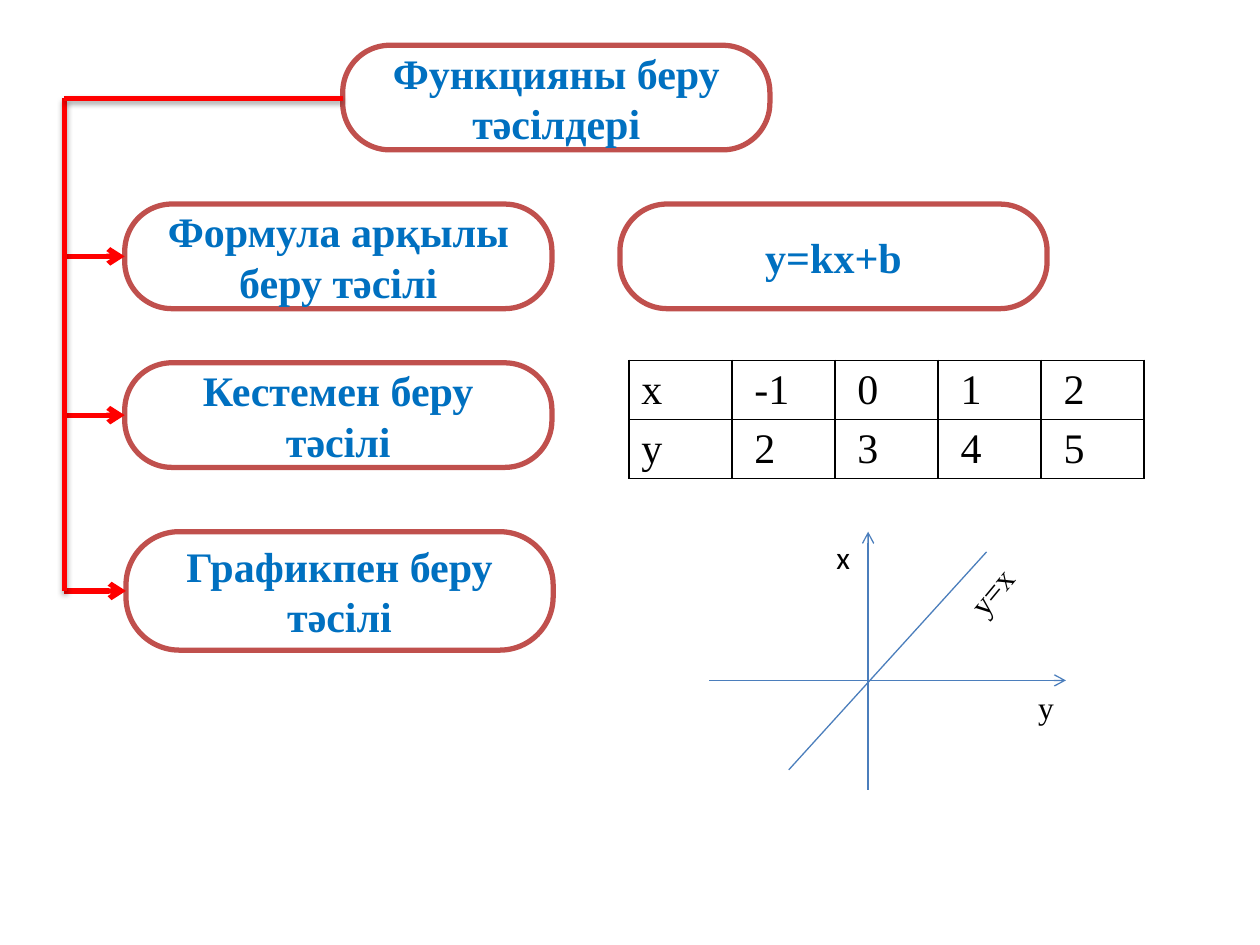
from lxml.etree import SubElement
from pptx import Presentation
from pptx.dml.color import RGBColor
from pptx.enum.shapes import MSO_CONNECTOR as Connector, MSO_SHAPE as Shape
from pptx.enum.text import MSO_ANCHOR as Anchor, PP_ALIGN as Align
from pptx.oxml.ns import qn
from pptx.util import Inches, Pt

WHITE = RGBColor(0xFF, 0xFF, 0xFF)
BLACK = RGBColor(0, 0, 0)
BLUE = RGBColor(0x00, 0x70, 0xC0)
BRICK = RGBColor(0xC0, 0x50, 0x4D)
RED = RGBColor(0xFF, 0, 0)
AXIS_BLUE = RGBColor(0x4B, 0x7E, 0xBC)
SERIF = "Times New Roman"

BOX_WIDTH, BOX_HEIGHT = 3.39, 0.83
TRUNK_X, TRUNK_TOP = 0.51, 0.78
METHODS = [
    ("Формула арқылы беру тәсілі", 0.99, 1.62, BOX_HEIGHT),
    ("Кестемен беру тәсілі", 0.99, 2.88, BOX_HEIGHT),
    ("Графикпен беру тәсілі", 1, 4.22, 0.94),
]
VALUES = [("x", "-1", "0", "1", "2"), ("y", "2", "3", "4", "5")]


def style_text(frame, size, color, font=SERIF, bold=False):
    for run in frame.paragraphs[0].runs:
        run.font.name = font
        run.font.size = Pt(size)
        run.font.bold = bold
        run.font.color.rgb = color


def add_box(slide, text, left, top, height=BOX_HEIGHT):
    box = slide.shapes.add_shape(Shape.ROUNDED_RECTANGLE, Inches(left), Inches(top),
                                 Inches(BOX_WIDTH), Inches(height))
    box.adjustments[0] = 0.45
    box.shadow.inherit = False
    box.fill.solid()
    box.fill.fore_color.rgb = WHITE
    box.line.color.rgb = BRICK
    box.line.width = Pt(3)
    frame = box.text_frame
    frame.word_wrap = True
    frame.vertical_anchor = Anchor.MIDDLE
    frame.text = text
    frame.paragraphs[0].alignment = Align.CENTER
    style_text(frame, 24, BLUE, bold=True)


def add_line(slide, start, end, color, width, arrow=False, shadow=False):
    line = slide.shapes.add_connector(Connector.STRAIGHT, *map(Inches, start + end))
    line.line.color.rgb = color
    line.line.width = Pt(width)
    properties = line._element.spPr
    if arrow:
        SubElement(properties.find(qn("a:ln")), qn("a:tailEnd"), type="arrow")
    effects = SubElement(properties, qn("a:effectLst"))
    if shadow:
        outer = SubElement(effects, qn("a:outerShdw"), blurRad=str(Pt(3.1)),
                           dist=str(Pt(1.8)), dir="5400000", rotWithShape="0")
        tint = SubElement(outer, qn("a:srgbClr"), val=str(BLACK))
        SubElement(tint, qn("a:alpha"), val="35000")


def add_label(slide, text, left, top, width, font=SERIF, rotation=0):
    label = slide.shapes.add_textbox(Inches(left), Inches(top), Inches(width), Inches(0.4))
    label.rotation = rotation
    label.text_frame.word_wrap = False
    label.text_frame.text = text
    style_text(label.text_frame, 18, BLACK, font)


def add_borders(cell):
    properties = cell._tc.get_or_add_tcPr()
    for position, side in enumerate(("a:lnL", "a:lnR", "a:lnT", "a:lnB")):
        border = properties.makeelement(qn(side), {"w": str(Pt(1))})
        fill = SubElement(border, qn("a:solidFill"))
        SubElement(fill, qn("a:srgbClr"), val=str(BLACK))
        properties.insert(position, border)


def add_value_table(slide):
    table = slide.shapes.add_table(len(VALUES), len(VALUES[0]), Inches(4.99), Inches(2.86),
                                   Inches(4.09), Inches(0.94)).table
    for r, row in enumerate(VALUES):
        for c, value in enumerate(row):
            cell = table.cell(r, c)
            cell.fill.solid()
            cell.fill.fore_color.rgb = WHITE
            cell.margin_left = Inches(0.18 if c else 0.1)
            cell.text_frame.text = value
            style_text(cell.text_frame, 24, BLACK)
            add_borders(cell)


def add_graph(slide):
    add_line(slide, (5.63, 5.4), (8.46, 5.4), AXIS_BLUE, 0.75, arrow=True)
    add_line(slide, (6.89, 6.27), (6.89, 4.22), AXIS_BLUE, 0.75, arrow=True)
    add_line(slide, (7.83, 4.38), (6.26, 6.11), AXIS_BLUE, 0.75)
    add_label(slide, "х", 6.54, 4.22, 0.31, font="Calibri")
    add_label(slide, "у", 8.14, 5.41, 0.33)
    add_label(slide, "y=x", 7.57, 4.49, 0.6, rotation=309.5)


def add_method_tree(slide):
    title_left = 2.72
    add_box(slide, "Функцияны беру тәсілдері", title_left, 0.36)
    for text, left, top, height in METHODS:
        add_box(slide, text, left, top, height)
        middle = top + height / 2
        add_line(slide, (TRUNK_X, middle), (left, middle), RED, 3, arrow=True)
    add_line(slide, (TRUNK_X, middle), (TRUNK_X, TRUNK_TOP), RED, 3, shadow=True)
    add_line(slide, (TRUNK_X, TRUNK_TOP), (title_left, TRUNK_TOP), RED, 3, shadow=True)


def main():
    deck = Presentation()
    deck.slide_width, deck.slide_height = Inches(10), Inches(7.5)
    slide = deck.slides.add_slide(deck.slide_layouts[6])
    add_method_tree(slide)
    add_box(slide, "y=kx+b", 4.92, 1.62)
    add_value_table(slide)
    add_graph(slide)
    deck.save("out.pptx")


if __name__ == "__main__":
    main()
